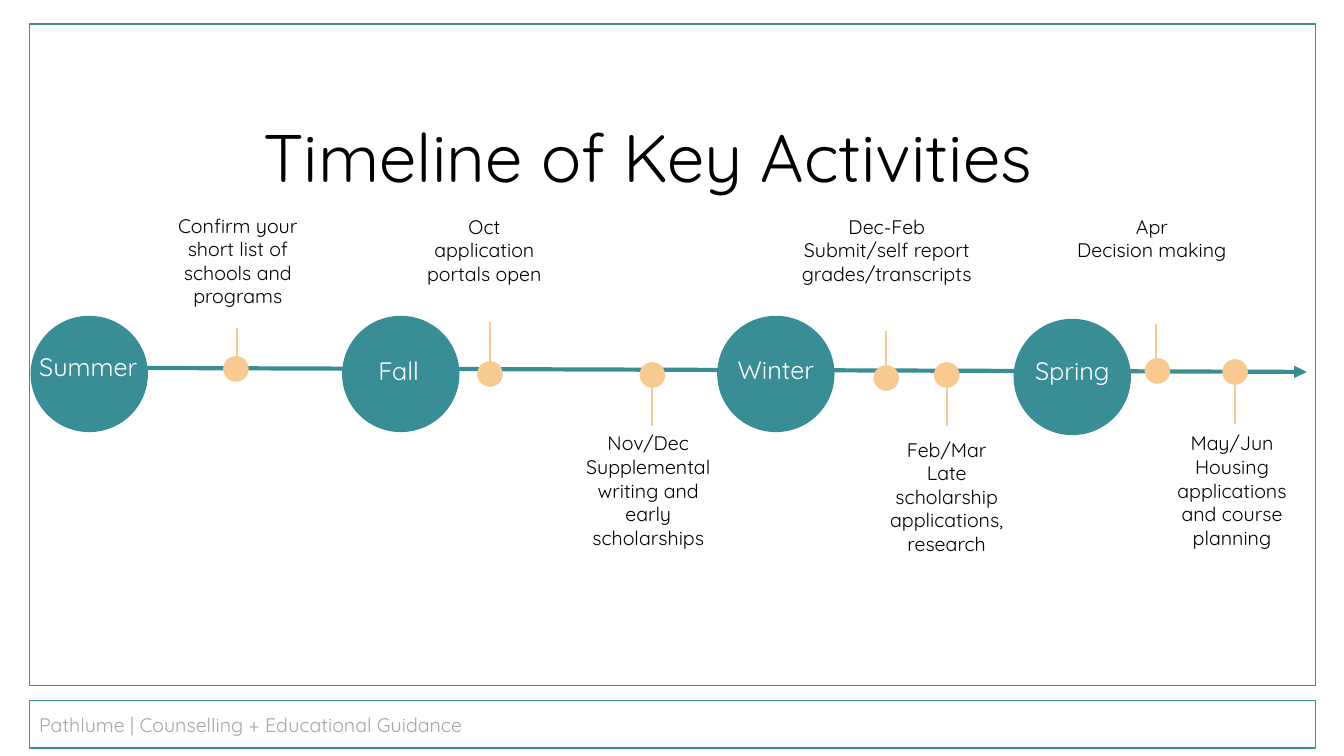
from pptx import Presentation
from pptx.dml.color import RGBColor
from pptx.enum.shapes import MSO_CONNECTOR, MSO_SHAPE
from pptx.enum.text import MSO_ANCHOR, MSO_AUTO_SIZE, PP_ALIGN
from pptx.oxml.ns import qn
from pptx.util import Inches, Pt
from lxml.etree import SubElement

TEAL, PEACH, GREY = "398E96", "F8CA90", "A6A6A6"
BLACK, WHITE = "000000", "FFFFFF"
color = RGBColor.from_string

deck = Presentation()
deck.slide_width, deck.slide_height = Inches(13.33), Inches(7.5)
slide = deck.slides.add_slide(deck.slide_layouts[5])
shapes = slide.shapes


def write(shape, text, size, ink, align=PP_ALIGN.CENTER, anchor=MSO_ANCHOR.TOP):
    frame = shape.text_frame
    frame.text = text
    frame.word_wrap = True
    frame.auto_size = MSO_AUTO_SIZE.NONE
    frame.vertical_anchor = anchor
    for para in frame.paragraphs:
        para.alignment = align
        for run in para.runs:
            run.font.name = "Quicksand"
            run.font.size = Pt(size)
            run.font.color.rgb = color(ink)


def draw(kind, box, edge, fill=None):
    if kind == "line":
        shape = shapes.add_connector(MSO_CONNECTOR.STRAIGHT, *map(Inches, box))
        SubElement(shape._element.spPr, qn("a:effectLst"))
    else:
        shape = shapes.add_shape(kind, *map(Inches, box))
        shape.shadow.inherit = False
        if fill:
            shape.fill.solid()
            shape.fill.fore_color.rgb = color(fill)
        else:
            shape.fill.background()
    shape.line.color.rgb = color(edge)
    shape.line.width = Pt(1)
    return shape


# Title
title = shapes.title
title.left, title.top = Inches(2.51), Inches(1.09)
title.width, title.height = Inches(9.44), Inches(0.91)
write(title, "Timeline of Key Activities", 48, BLACK, PP_ALIGN.LEFT)

# Footer and frame
footer = draw(MSO_SHAPE.RECTANGLE, (0.29, 6.95, 12.76, 0.47), TEAL)
write(footer, "Pathlume | Counselling + Educational Guidance", 14, GREY,
      PP_ALIGN.LEFT, MSO_ANCHOR.MIDDLE)
draw(MSO_SHAPE.RECTANGLE, (0.29, 0.24, 12.76, 6.56), TEAL)

# Time axis
axis = draw("line", (1.3, 3.65, 12.96, 3.69), TEAL)
axis.line.width = Pt(3)
SubElement(axis.line._get_or_add_ln(), qn("a:tailEnd"), type="triangle")

# Seasons: name, circle left and top, label left and top
seasons = [
    ("Summer", 0.31, 3.14, 0.23, 3.44),
    ("Fall", 3.4, 3.14, 3.31, 3.48),
    ("Winter", 7.12, 3.14, 7.05, 3.47),
    ("Spring", 10.06, 3.17, 9.99, 3.48),
]
for name, left, top, x, y in seasons:
    draw(MSO_SHAPE.OVAL, (left, top, 1.15, 1.14), TEAL, TEAL)
    label = shapes.add_textbox(*map(Inches, (x, y, 1.29, 0.4)))
    write(label, name, 18, WHITE)

# Events: text, dot left and top, stem x and top, text box
events = [
    ("Confirm your short list of schools and programs",
     2.22, 3.54, 2.35, 3.25, (1.53, 2.07, 1.66, 1.04)),
    ("Oct application portals open",
     4.74, 3.59, 4.86, 3.19, (4.09, 2.08, 1.43, 0.81)),
    ("Nov/Dec\nSupplemental writing and early scholarships",
     6.35, 3.6, 6.47, 3.83, (5.63, 4.23, 1.6, 1.28)),
    ("Dec-Feb\nSubmit/self report grades/transcripts",
     8.67, 3.63, 8.79, 3.28, (7.79, 2.08, 2.01, 0.81)),
    ("Feb/Mar\nLate scholarship applications, research",
     9.27, 3.6, 9.39, 3.83, (8.59, 4.29, 1.6, 1.28)),
    ("Apr\nDecision making",
     11.36, 3.56, 11.47, 3.21, (10.42, 2.08, 2.01, 0.57)),
    ("May/Jun\nHousing applications and course planning",
     12.13, 3.57, 12.25, 3.81, (11.42, 4.23, 1.6, 1.28)),
]
for text, left, top, x, y, box in events:
    draw(MSO_SHAPE.OVAL, (left, top, 0.24, 0.24), PEACH, PEACH)
    stem = draw("line", (x, y, x, y + 0.4), PEACH)
    stem.line.width = Pt(1.5)
    note = shapes.add_textbox(*map(Inches, box))
    write(note, text, 14, BLACK)

deck.save("out.pptx")
